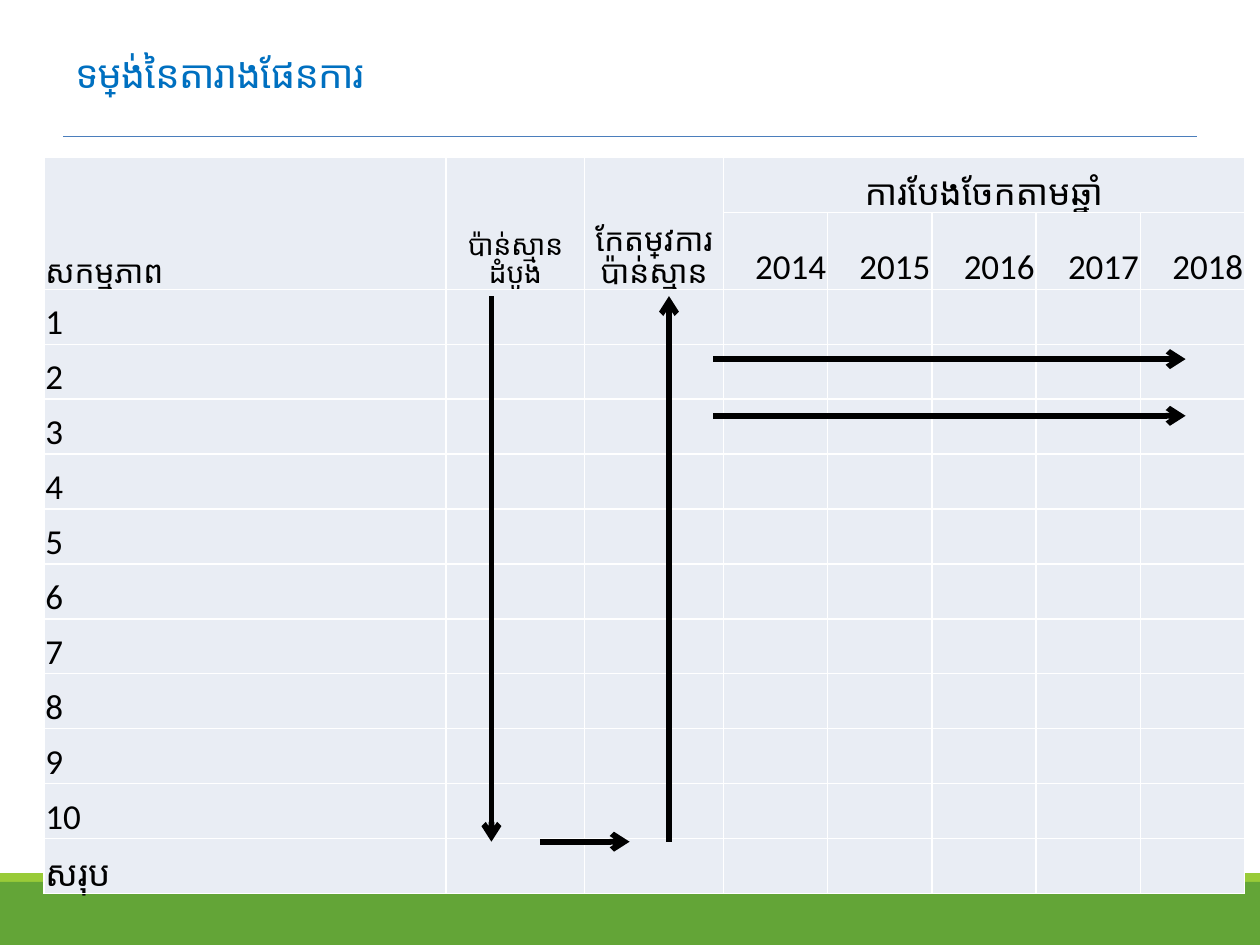
from lxml.etree import SubElement
from pptx import Presentation
from pptx.dml.color import RGBColor
from pptx.enum.shapes import MSO_CONNECTOR, MSO_SHAPE
from pptx.enum.text import MSO_ANCHOR, PP_ALIGN
from pptx.oxml import parse_xml
from pptx.oxml.ns import nsdecls, qn
from pptx.util import Pt

COLORS = {
    "lime": "99CB38", "green": "63A537", "rule": "4B7EBC", "title": "0070C0",
    "cell": "E9EDF4", "border": "FFFFFF", "black": "000000",
}
YEARS = ["2014", "2015", "2016", "2017", "2018"]
ACTIVITIES = [str(n) for n in range(1, 11)]
COL_WIDTHS = [229.7, 79.2, 79.2] + [59.6] * len(YEARS)
ROW_HEIGHT = 31.4


def rgb(name):
    """Return the named colour."""
    return RGBColor.from_string(COLORS[name])


def write(tf, text, size=20, font="Calibri", color="black", align=PP_ALIGN.LEFT, spacing=None):
    """Write one formatted run into the first paragraph of a text frame."""
    p = tf.paragraphs[0]
    p.alignment = align
    r = p.add_run()
    r.text = text
    r.font.size = Pt(size)
    r.font.name = font
    r.font.color.rgb = rgb(color)
    if spacing is not None:
        r.font._element.set("spc", str(round(spacing * 100)))


def add_line(s, start, end, color, width, arrow=False):
    """Draw a straight line, with an arrowhead at its end if asked."""
    line = s.shapes.add_connector(MSO_CONNECTOR.STRAIGHT, *map(Pt, start + end))
    line.line.color.rgb = rgb(color)
    line.line.width = Pt(width)
    if arrow:
        SubElement(line.line._get_or_add_ln(), qn("a:tailEnd"), type="arrow")
    SubElement(line._element.spPr, qn("a:effectLst"))


def add_footer(s, left, top, width, height):
    """Draw the thin lime band above the green band."""
    band = 5
    for color, y, h in [("lime", top, band), ("green", top + band, height - band)]:
        sp = s.shapes.add_shape(MSO_SHAPE.RECTANGLE, Pt(left), Pt(y), Pt(width), Pt(h))
        sp.shadow.inherit = False
        sp.fill.solid()
        sp.fill.fore_color.rgb = rgb(color)
        sp.line.fill.background()


def add_title(s, left, top, width, height):
    """Place the title and the rule along the bottom of its box."""
    bottom = top + height
    add_line(s, (left, bottom), (left + width, bottom), "rule", 0.75)
    tf = s.shapes.add_textbox(Pt(left), Pt(top), Pt(width), Pt(height)).text_frame
    tf.word_wrap = True
    tf.vertical_anchor = MSO_ANCHOR.MIDDLE
    write(tf, "ទម្រង់នៃតារាងផែនការ", size=22, font="Arial", color="title", spacing=-0.5)


def style_cell(cell):
    """Give a cell its fill, margins, anchor and white borders."""
    cell.fill.solid()
    cell.fill.fore_color.rgb = rgb("cell")
    cell.vertical_anchor = MSO_ANCHOR.BOTTOM
    cell.margin_left = cell.margin_right = cell.margin_top = Pt(0.75)
    cell.margin_bottom = Pt(0)
    tc_pr = cell._tc.get_or_add_tcPr()
    for i, side in enumerate(["lnL", "lnR", "lnT", "lnB"]):
        tc_pr.insert(i, parse_xml(
            f'<a:{side} {nsdecls("a")} w="12700"><a:solidFill>'
            f'<a:srgbClr val="{COLORS["border"]}"/></a:solidFill></a:{side}>'))


def add_plan_table(s, left, top, width, height):
    """Build the plan table with its two header rows."""
    rows = len(ACTIVITIES) + 3
    table = s.shapes.add_table(
        rows, len(COL_WIDTHS), Pt(left), Pt(top), Pt(width), Pt(height)).table
    for col, w in zip(table.columns, COL_WIDTHS):
        col.width = Pt(w)
    for row in table.rows:
        row.height = Pt(ROW_HEIGHT)
    for cell in table.iter_cells():
        style_cell(cell)

    for col in range(3):
        table.cell(0, col).merge(table.cell(1, col))
    table.cell(0, 3).merge(table.cell(0, 7))
    headers = [
        ("សកម្មភាព", 18, PP_ALIGN.LEFT),
        ("ប៉ាន់ស្មានដំបូង", 16, PP_ALIGN.CENTER),
        ("កែតម្រូវការប៉ាន់ស្មាន", 18, PP_ALIGN.CENTER),
        ("ការបែងចែកតាមឆ្នាំ", 20, PP_ALIGN.CENTER),
    ]
    for col, (text, size, align) in enumerate(headers):
        write(table.cell(0, col).text_frame, text, size=size, font="Lato", align=align)
    for col, year in enumerate(YEARS, 3):
        write(table.cell(1, col).text_frame, year, align=PP_ALIGN.RIGHT)
    for row, number in enumerate(ACTIVITIES, 2):
        write(table.cell(row, 0).text_frame, number)
    write(table.cell(rows - 1, 0).text_frame, "សរុប", font="Lato")


def add_flow_arrows(s, left, top, width, height):
    """Draw the order of work: down, across, up, then along the years."""
    right, bottom = left + width, top + height
    up_x, years_x = left + 101.5, left + 126.7
    arrows = [
        ((left, top), (left, bottom)),
        ((left + 28, bottom), (left + 79, bottom)),
        ((up_x, bottom), (up_x, top)),
    ]
    arrows += [((years_x, top + dy), (right, top + dy)) for dy in (36, 68.4)]
    for start, end in arrows:
        add_line(s, start, end, "black", 3.25, arrow=True)


def main():
    """Build and save the slide."""
    prs = Presentation()
    prs.slide_width, prs.slide_height = Pt(720), Pt(540)
    s = prs.slides.add_slide(prs.slide_layouts[6])
    add_footer(s, 0, 499, 720, 41)
    add_title(s, 36, 6, 648, 72)
    add_plan_table(s, 25.2, 90, sum(COL_WIDTHS), ROW_HEIGHT * 13)
    add_flow_arrows(s, 280.8, 169.2, 396.7, 311.8)
    prs.save("out.pptx")


if __name__ == "__main__":
    main()
